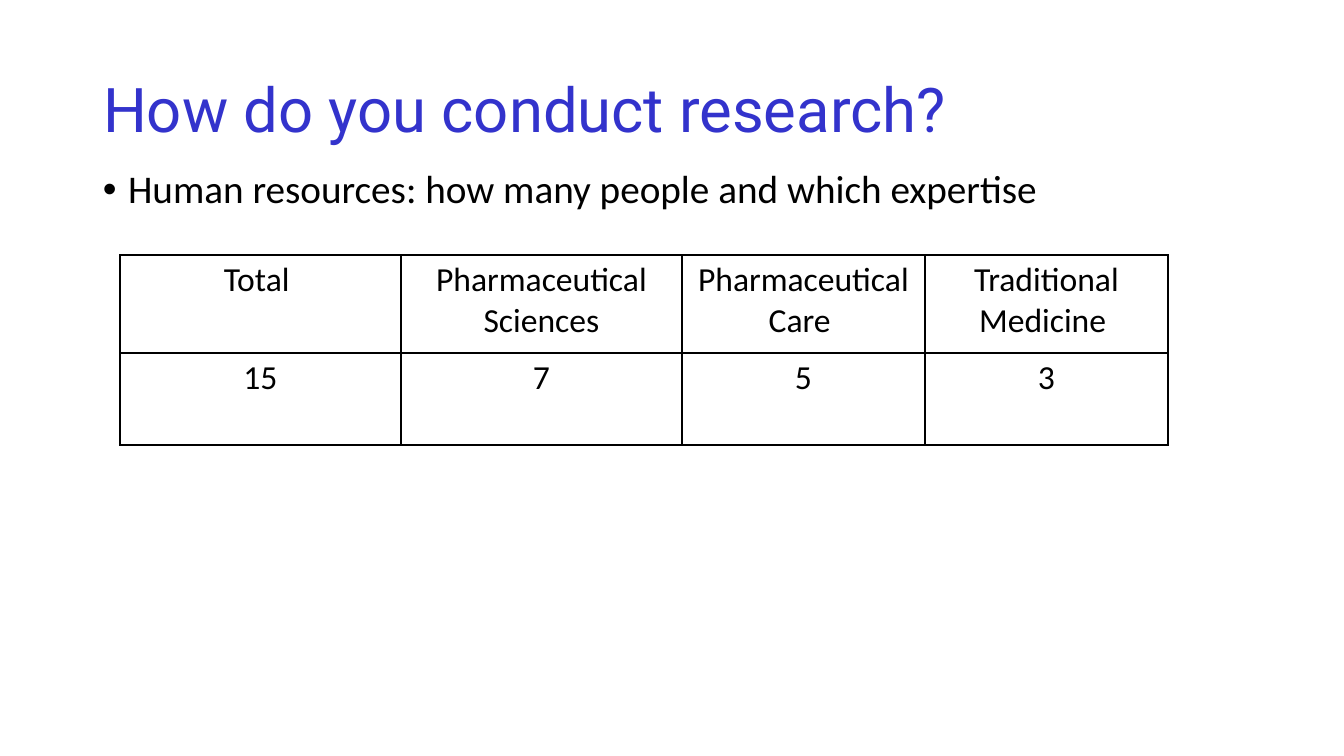
from lxml.etree import SubElement
from pptx import Presentation
from pptx.dml.color import RGBColor
from pptx.enum.text import MSO_ANCHOR, PP_ALIGN
from pptx.oxml.ns import qn
from pptx.util import Pt

PX = 914400 / 100.8
BLACK = "000000"


def px(*lengths):
    """Turn pixel lengths into EMU."""
    return [round(length * PX) for length in lengths]


def write(paragraph, text, font, size, color, **layout):
    run = paragraph.add_run()
    run.text = text
    run.font.name = font
    run.font.size = Pt(size)
    run.font.color.rgb = RGBColor.from_string(color)
    for name, value in layout.items():
        setattr(paragraph, name, value)


deck = Presentation()
deck.slide_width, deck.slide_height = px(1344, 756)
slide = deck.slides.add_slide(deck.slide_layouts[5])

# Heading
heading = slide.shapes.title
heading.left, heading.top, heading.width, heading.height = px(93, 40, 1159, 146)
heading.text_frame.vertical_anchor = MSO_ANCHOR.MIDDLE
write(heading.text_frame.paragraphs[0], "How do you conduct research?",
      "Roboto", 44, "3333CC", alignment=PP_ALIGN.LEFT, line_spacing=0.9)

# Bulleted question
question = slide.shapes.add_textbox(*px(93, 165, 1159, 480)).text_frame
question.word_wrap = True
bullet_line = question.paragraphs[0]
write(bullet_line, "Human resources: how many people and which expertise",
      "Calibri", 28, BLACK, line_spacing=0.9, space_before=Pt(10))
bullet_format = bullet_line._p.get_or_add_pPr()
bullet_format.set("marL", "228600")
bullet_format.set("indent", "-228600")
SubElement(bullet_format, qn("a:buFont"), typeface="Arial")
SubElement(bullet_format, qn("a:buChar"), char="•")

# Staff by field of expertise
staff = [
    ["Total ", "Pharmaceutical Sciences", "Pharmaceutical Care ", "Traditional Medicine "],
    ["15", "7", "5", "3"],
]
column_widths = px(281, 281, 243, 243)
row_heights = px(98, 92)
left, top = px(120, 255)
staff_table = slide.shapes.add_table(
    len(staff), len(staff[0]), left, top, sum(column_widths), sum(row_heights)).table
staff_table.first_row = staff_table.horz_banding = False
for column, width in zip(staff_table.columns, column_widths):
    column.width = width
for row, height, entries in zip(staff_table.rows, row_heights, staff):
    row.height = height
    for cell, entry in zip(row.cells, entries):
        write(cell.text_frame.paragraphs[0], entry, "Calibri", 24, BLACK,
              alignment=PP_ALIGN.CENTER)
        # Borders come before the fill in the cell properties
        cell_format = cell._tc.get_or_add_tcPr()
        for side in ("a:lnL", "a:lnR", "a:lnT", "a:lnB"):
            border = SubElement(cell_format, qn(side), w=str(Pt(1)))
            border_fill = SubElement(border, qn("a:solidFill"))
            SubElement(border_fill, qn("a:srgbClr"), val=BLACK)
        cell.fill.background()

deck.save("out.pptx")
